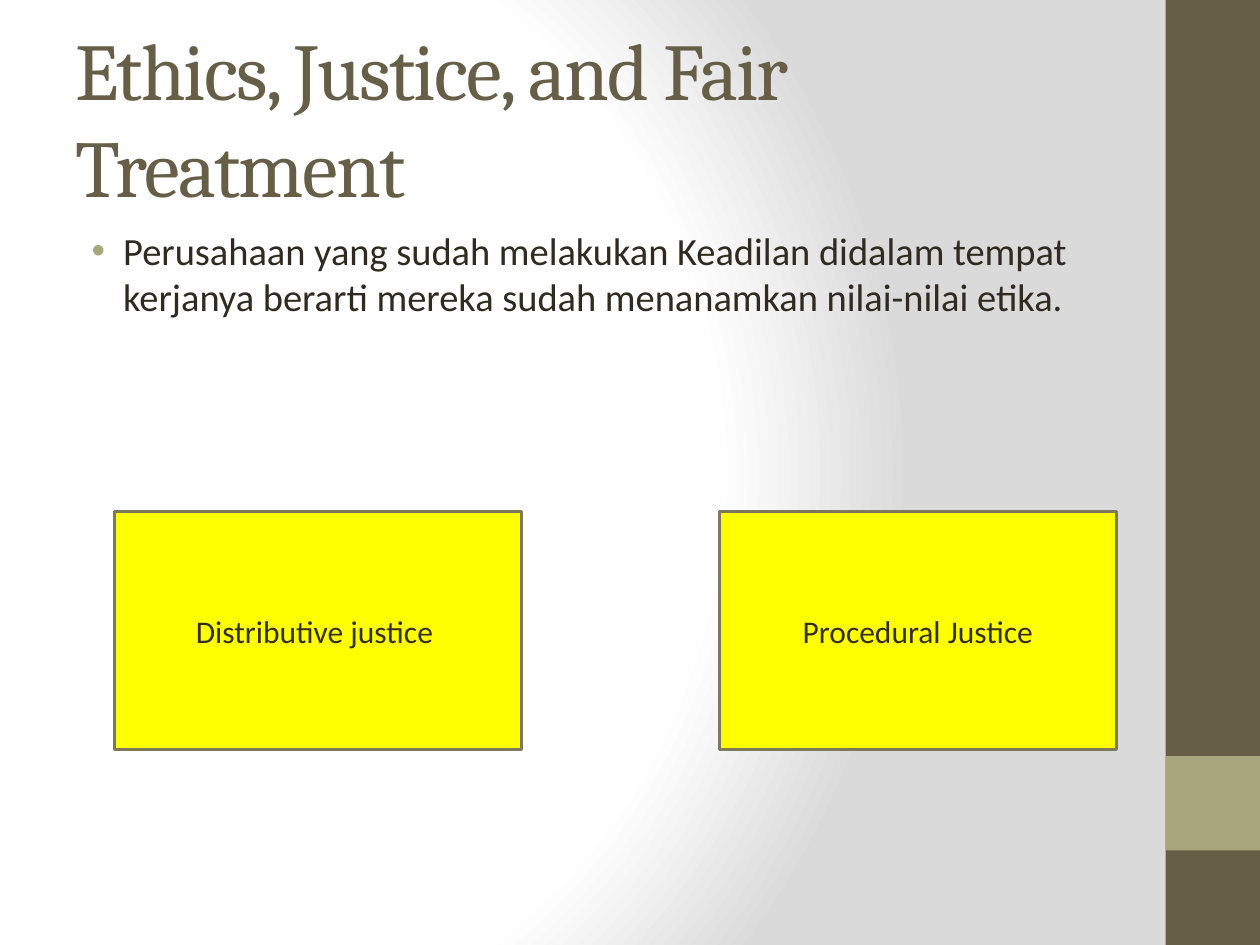
from pptx import Presentation
from pptx.dml.color import RGBColor
from pptx.enum import shapes, text
from pptx.oxml import parse_xml
from pptx.oxml.ns import nsdecls, qn
from pptx.util import Inches, Pt

BROWN = RGBColor(0x67, 0x5E, 0x47)
SAGE = RGBColor(0xA9, 0xA5, 0x7C)
YELLOW = RGBColor(0xFF, 0xFF, 0x00)
OUTLINE = RGBColor(0x7D, 0x7A, 0x5C)
BODY_INK = RGBColor(0x2F, 0x2B, 0x20)
BOX_INK = RGBColor(0x34, 0x2F, 0x24)
WHITE = RGBColor(0xFF, 0xFF, 0xFF)
GREY = RGBColor(0xDA, 0xDA, 0xDA)


def add_background(s):
    """Fill the slide with a circular white to grey gradient."""
    s.background.fill.solid()
    bg = s._element.find(".//" + qn("p:bgPr"))
    stops = "".join(
        f'<a:gs pos="{pos * 1000}"><a:srgbClr val="{color}"/></a:gs>'
        for pos, color in ((0, WHITE), (75, WHITE), (100, GREY)))
    bg.replace(bg.find(qn("a:solidFill")), parse_xml(
        f'<a:gradFill {nsdecls("a")} rotWithShape="1"><a:gsLst>{stops}</a:gsLst>'
        '<a:path path="circle"><a:fillToRect l="20000" t="50000" r="100000" '
        'b="50000"/></a:path></a:gradFill>'))


def add_rect(s, box, fill, line=None):
    """Add a flat rectangle, outlined if a line colour is given."""
    sp = s.shapes.add_shape(shapes.MSO_SHAPE.RECTANGLE, *map(Inches, box))
    sp.shadow.inherit = False
    sp.fill.solid()
    sp.fill.fore_color.rgb = fill
    if line is None:
        sp.line.fill.background()
    else:
        sp.line.color.rgb = line
        sp.line.width = Pt(2)
    return sp


def add_run(p, words, size, font, color):
    """Add one styled run to a paragraph."""
    r = p.add_run()
    r.text = words
    r.font.size = Pt(size)
    r.font.name = font
    r.font.color.rgb = color
    return r


def add_sidebar(s, left, top, width, height):
    """Draw the brown side band with its square accent."""
    add_rect(s, (left, top, width, height), BROWN)
    add_rect(s, (left, top + height - 2 * width, width, width), SAGE)


def add_text_frame(s, box, anchor):
    """Add a wrapping text box and return its frame."""
    tf = s.shapes.add_textbox(*map(Inches, box)).text_frame
    tf.word_wrap = True
    tf.vertical_anchor = anchor
    return tf


def add_title(s, box, words):
    """Write the title with slightly tightened letters."""
    tf = add_text_frame(s, box, text.MSO_ANCHOR.MIDDLE)
    r = add_run(tf.paragraphs[0], words, 46, "Cambria", BROWN)
    r.font._element.set("spc", "-100")


def add_body(s, box, words):
    """Write the bulleted body paragraph."""
    p = add_text_frame(s, box, text.MSO_ANCHOR.TOP).paragraphs[0]
    p.space_before = Pt(4.4)
    add_run(p, words, 22, "Calibri", BODY_INK)
    pPr = p._p.get_or_add_pPr()
    pPr.set("marL", str(Inches(0.38)))
    pPr.set("indent", str(Inches(-0.25)))
    for bullet in (f'<a:buClr {nsdecls("a")}><a:srgbClr val="{SAGE}"/></a:buClr>',
                   f'<a:buFont {nsdecls("a")} typeface="Arial"/>',
                   f'<a:buChar {nsdecls("a")} char="•"/>'):
        pPr.append(parse_xml(bullet))


def add_justice_box(s, box, words):
    """Draw a yellow box with a centred label."""
    tf = add_rect(s, box, YELLOW, OUTLINE).text_frame
    tf.word_wrap = True
    tf.vertical_anchor = text.MSO_ANCHOR.MIDDLE
    p = tf.paragraphs[0]
    p.alignment = text.PP_ALIGN.CENTER
    add_run(p, words, 18, "Calibri", BOX_INK)


def main():
    """Build and save the slide."""
    prs = Presentation()
    prs.slide_width, prs.slide_height = Inches(10), Inches(7.5)
    s = prs.slides.add_slide(prs.slide_layouts[6])
    add_background(s)
    add_sidebar(s, 9.25, 0, 0.75, 7.5)
    add_title(s, (0.5, 0.3, 8.33, 1.25), "Ethics, Justice, and Fair Treatment")
    add_body(s, (0.5, 1.75, 8.33, 5.25),
             "Perusahaan yang sudah melakukan Keadilan didalam tempat kerjanya "
             "berarti mereka sudah menanamkan nilai-nilai etika.")
    for left, width, words in ((0.91, 3.23, "Distributive justice "),
                               (5.71, 3.15, "Procedural Justice")):
        add_justice_box(s, (left, 4.06, width, 1.89), words)
    prs.save("out.pptx")


if __name__ == "__main__":
    main()
